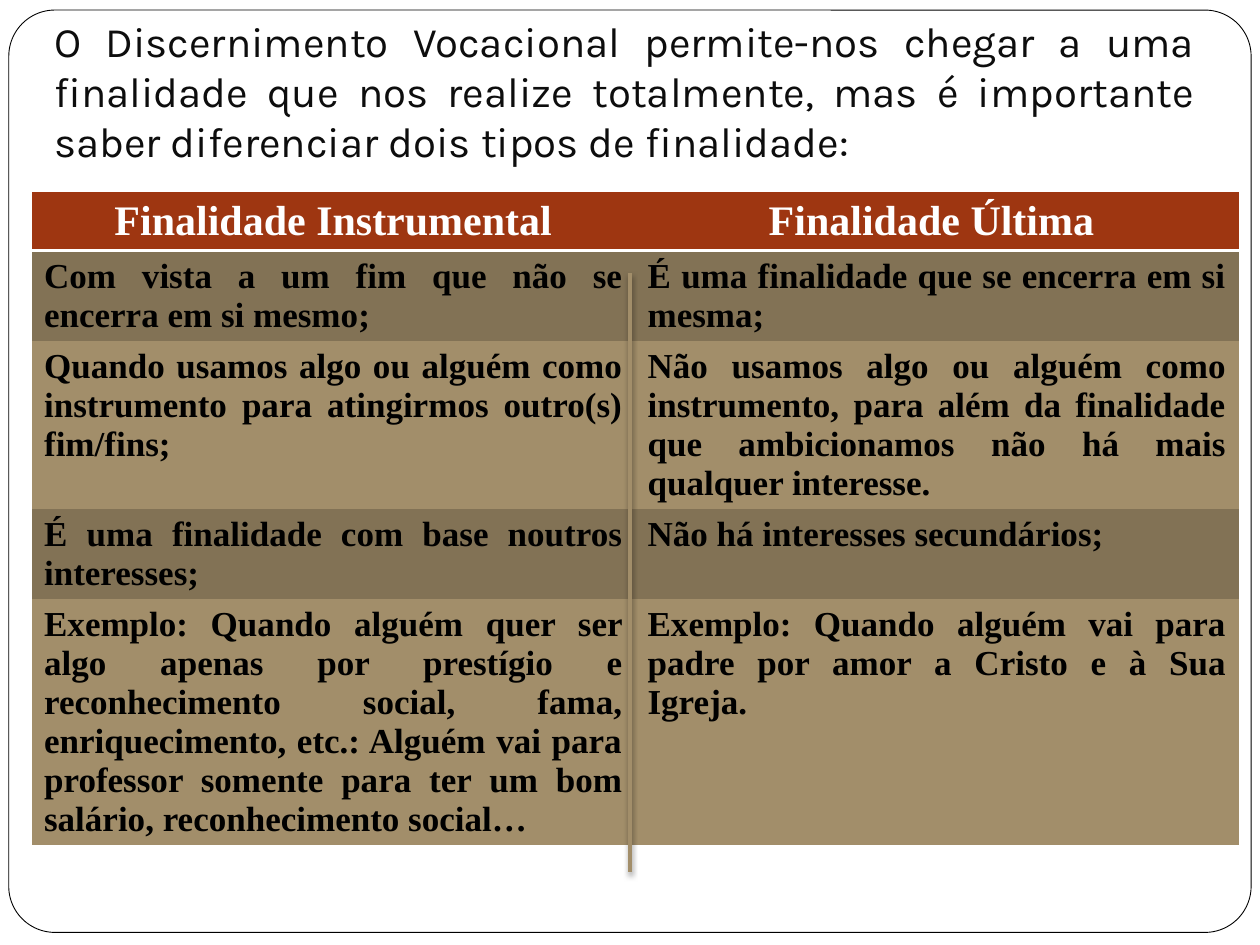
from lxml import etree
from pptx import Presentation
from pptx import util as u
from pptx.dml.color import RGBColor
from pptx.enum import shapes, text
from pptx.oxml import parse_xml
from pptx.oxml.ns import nsdecls, qn

COLORS = {
    "white": "FFFFFF", "black": "000000", "title": "0D0D0D",
    "header": "9E3611", "dark": "827255", "light": "A28E6A",
}
ROWS = [
    ("Finalidade Instrumental", "Finalidade Última "),
    ("Com vista a um fim que não se encerra em si mesmo;",
     "É uma finalidade que se encerra em si mesma;"),
    ("Quando usamos algo ou alguém como instrumento para atingirmos outro(s) fim/fins;",
     "Não usamos algo ou alguém como instrumento, para além da finalidade que "
     "ambicionamos não há mais qualquer interesse."),
    ("É uma finalidade com base noutros interesses;",
     "Não há interesses secundários;"),
    ("Exemplo: Quando alguém quer ser algo apenas por prestígio e reconhecimento "
     "social, fama, enriquecimento, etc.: Alguém vai para professor somente para ter "
     "um bom salário, reconhecimento social…",
     "Exemplo: Quando alguém vai para padre por amor a Cristo e à Sua Igreja."),
]
NO_STYLE = "{2D5ABB26-0587-4C30-8999-92F81FD0307C}"


def color(name):
    return RGBColor.from_string(COLORS[name])


def write(frame, words, font="Times New Roman", size=20, ink="black", bold=True,
          align=text.PP_ALIGN.JUSTIFY):
    paragraph = frame.paragraphs[0]
    paragraph.alignment = align
    run = paragraph.add_run()
    run.text = words
    run.font.name = font
    run.font.size = u.Pt(size)
    run.font.bold = bold
    run.font.color.rgb = color(ink)


presentation = Presentation()
presentation.slide_width, presentation.slide_height = u.Inches(10), u.Inches(7.5)
slide = presentation.slides.add_slide(presentation.slide_layouts[5])

# Rounded page frame, behind everything else
frame = slide.shapes.add_shape(
    shapes.MSO_SHAPE.ROUNDED_RECTANGLE,
    u.Inches(0.07), u.Inches(0.08), u.Inches(9.86), u.Inches(7.32))
frame.adjustments[0] = 0.05
frame.shadow.inherit = False
frame.fill.solid()
frame.fill.fore_color.rgb = color("white")
frame.line.color.rgb = color("black")
frame.line.width = u.Pt(0.5)

title = slide.shapes.title
frame._element.addnext(title._element)
title.left, title.top = u.Inches(0.33), u.Inches(-0.5)
title.width, title.height = u.Inches(9.25), u.Inches(1.92)
title_frame = title.text_frame
title_frame.auto_size = text.MSO_AUTO_SIZE.NONE
title_frame.word_wrap = True
title_frame.vertical_anchor = text.MSO_ANCHOR.BOTTOM
title_frame.margin_left = title_frame.margin_right = title_frame.margin_bottom = u.Inches(0.1)
title_frame.margin_top = u.Inches(0.05)
write(title_frame,
      "O Discernimento Vocacional permite-nos chegar a uma finalidade que nos realize "
      "totalmente, mas é importante saber diferenciar dois tipos de finalidade:",
      font="Karla", size=24, ink="title", bold=False)

# Comparison table: rows grow to fit their text
table = slide.shapes.add_table(
    len(ROWS), 2, u.Inches(0.25), u.Inches(1.52),
    u.Inches(9.58), u.Inches(0.41 * len(ROWS))).table
table._tbl.tblPr.find(qn("a:tableStyleId")).text = NO_STYLE
for row, words in enumerate(ROWS):
    for column, phrase in enumerate(words):
        cell = table.cell(row, column)
        if row == 0:
            write(cell.text_frame, phrase, size=24, ink="white",
                  align=text.PP_ALIGN.CENTER)
            cell._tc.get_or_add_tcPr().append(parse_xml(
                f'<a:lnB {nsdecls("a")} w="{u.Pt(2)}"><a:solidFill>'
                f'<a:srgbClr val="{COLORS["white"]}"/></a:solidFill></a:lnB>'))
        else:
            write(cell.text_frame, phrase)
        cell.fill.solid()
        cell.fill.fore_color.rgb = color(
            "header" if row == 0 else "dark" if row % 2 else "light")

# Divider between the two columns, with a soft shadow below
divider = slide.shapes.add_connector(
    shapes.MSO_CONNECTOR.STRAIGHT,
    u.Inches(5), u.Inches(2.17), u.Inches(5), u.Inches(6.92))
divider.line.color.rgb = color("light")
divider.line.width = u.Pt(2)
effects = etree.SubElement(divider._element.spPr, qn("a:effectLst"))
shadow = etree.SubElement(effects, qn("a:outerShdw"), blurRad=str(u.Pt(3)),
                          dist=str(u.Pt(2)), dir="5400000", rotWithShape="0")
shade = etree.SubElement(shadow, qn("a:srgbClr"), val=COLORS["black"])
etree.SubElement(shade, qn("a:alpha"), val="50000")

presentation.save("out.pptx")
